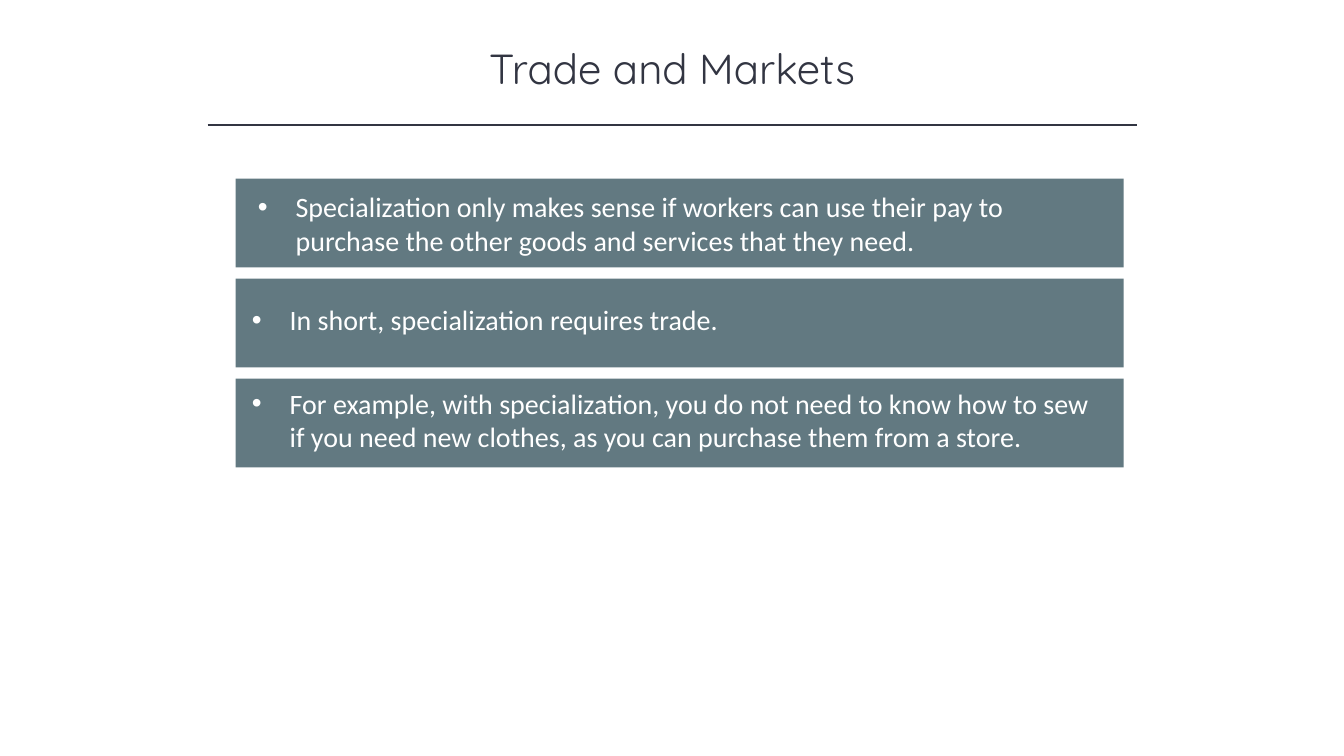
from lxml import etree
from pptx import Presentation
from pptx.dml.color import RGBColor
from pptx.enum.shapes import MSO_CONNECTOR, MSO_SHAPE
from pptx.enum.text import MSO_ANCHOR, PP_ALIGN
from pptx.oxml.ns import qn
from pptx.util import Cm, Pt

RECTANGLE = MSO_SHAPE.RECTANGLE
STRAIGHT = MSO_CONNECTOR.STRAIGHT
MIDDLE = MSO_ANCHOR.MIDDLE
LEFT, CENTER = PP_ALIGN.LEFT, PP_ALIGN.CENTER

COLORS = {"ink": "323542", "slate": "627981", "white": "FFFFFF"}
TITLE_FONT, BODY_FONT = "Quicksand", "Calibri"
INDENT = Cm(0.95)

# Bars: one shared size and step
BAR_LEFT, BAR_TOP, BAR_WIDTH, BAR_HEIGHT = 5.94, 4.5, 22.38, 2.24
BAR_STEP = 2.52
TEXT_WIDTH = 21.69

# Text, then left, top and height of its box
POINTS = [
    ("Specialization only makes sense if workers can use their pay to "
     "purchase the other goods and services that they need.", 6.25, 4.65, 1.96),
    ("In short, specialization requires trade.", 6.1, 7.49, 1.12),
    ("For example, with specialization, you do not need to know how to sew "
     "if you need new clothes, as you can purchase them from a store.",
     6.1, 9.6, 1.96),
]


class SlideBuilder:
    def __init__(self, page):
        self.page = page

    def color(self, name):
        return RGBColor.from_string(COLORS[name])

    def add_span(self, para, text, size, font, color):
        span = para.add_run()
        span.text = text
        span.font.size = Pt(size)
        span.font.name = font
        span.font.bold = False
        span.font.color.rgb = self.color(color)

    def title(self, text, left, top, width, height):
        box = self.page.shapes.title
        box.left, box.top = Cm(left), Cm(top)
        box.width, box.height = Cm(width), Cm(height)
        box.text_frame.vertical_anchor = MIDDLE
        para = box.text_frame.paragraphs[0]
        para.alignment = CENTER
        self.add_span(para, text, 30, TITLE_FONT, "ink")

    def rule(self, left, right, top):
        line = self.page.shapes.add_connector(
            STRAIGHT, Cm(left), Cm(top), Cm(right), Cm(top))
        line.line.color.rgb = self.color("ink")
        line.line.width = Pt(1)
        etree.SubElement(line._element.spPr, qn("a:effectLst"))

    def rectangle(self, group, left, top, width, height):
        box = group.shapes.add_shape(
            RECTANGLE, Cm(left), Cm(top), Cm(width), Cm(height))
        box.shadow.inherit = False
        box.fill.solid()
        box.fill.fore_color.rgb = self.color("slate")
        box.line.fill.background()
        return box

    def bullet(self, para):
        properties = para._p.get_or_add_pPr()
        properties.set("marL", str(INDENT))
        properties.set("indent", str(-INDENT))
        etree.SubElement(properties, qn("a:buFont"), typeface="Arial")
        etree.SubElement(properties, qn("a:buChar"), char="•")

    def point(self, bar_top, text, left, top, height):
        group = self.page.shapes.add_group_shape()
        self.rectangle(group, BAR_LEFT, bar_top, BAR_WIDTH, BAR_HEIGHT)
        box = self.rectangle(group, left, top, TEXT_WIDTH, height)
        box.text_frame.word_wrap = True
        box.text_frame.vertical_anchor = MIDDLE
        para = box.text_frame.paragraphs[0]
        para.alignment = LEFT
        self.bullet(para)
        self.add_span(para, text, 20, BODY_FONT, "white")


def main():
    deck = Presentation()
    deck.slide_width, deck.slide_height = Cm(33.87), Cm(19.05)
    title_only = deck.slide_layouts[5]
    builder = SlideBuilder(deck.slides.add_slide(title_only))

    # Heading
    builder.title("Trade and Markets", 4.24, 0.94, 25.4, 1.55)
    builder.rule(5.23, 28.65, 3.15)

    # Bulleted bars
    for row, (text, left, top, height) in enumerate(POINTS):
        builder.point(BAR_TOP + row * BAR_STEP, text, left, top, height)

    deck.save("out.pptx")


if __name__ == "__main__":
    main()
